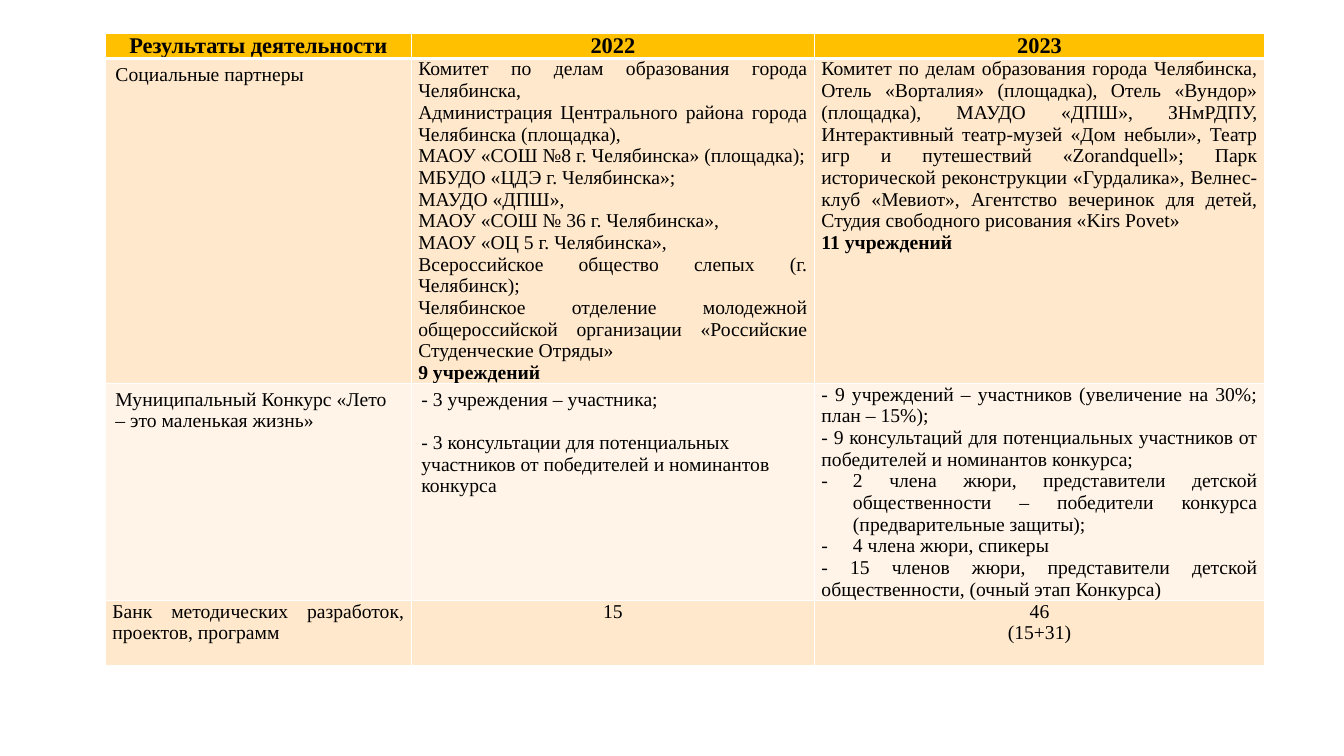
from lxml.etree import SubElement, fromstring
from pptx import Presentation
from pptx.dml.color import RGBColor
from pptx.enum.text import PP_ALIGN as Align
from pptx.oxml.ns import nsdecls, qn
from pptx.util import Pt

FONT = "Times New Roman"
HEADER_FILL, DARK_BAND, LIGHT_BAND = "FFC000", "FFE8CC", "FFF4E7"
LEFT, CENTER, JUSTIFY = Align.LEFT, Align.CENTER, Align.JUSTIFY
LINE_HEIGHT = 15.5
BULLET = "• "  # marks a paragraph that gets a hanging dash


def color(hex_text):
    return RGBColor.from_string(hex_text)


def add_border(cell, side, width):
    line = fromstring(
        f'<a:ln{side} {nsdecls("a")} w="{Pt(width)}"><a:solidFill>'
        f'<a:srgbClr val="FFFFFF"/></a:solidFill></a:ln{side}>')
    cell_props = cell._tc.get_or_add_tcPr()
    cell_props.insert("LRTB".index(side), line)


# Content: each cell is an alignment and its paragraphs
partners_2022 = [
    "Комитет по делам образования города Челябинска,",
    "Администрация Центрального района города Челябинска (площадка),",
    "МАОУ «СОШ №8 г. Челябинска» (площадка);",
    "МБУДО «ЦДЭ г. Челябинска»;",
    "МАУДО «ДПШ»,",
    "МАОУ «СОШ № 36 г. Челябинска»,",
    "МАОУ «ОЦ 5 г. Челябинска»,",
    "Всероссийское общество слепых (г. Челябинск);",
    "Челябинское отделение молодежной общероссийской организации "
    "«Российские Студенческие Отряды»",
    "9 учреждений",
]
partners_2023 = [
    "Комитет по делам образования города Челябинска, Отель «Ворталия» "
    "(площадка), Отель «Вундор» (площадка), МАУДО «ДПШ», ЗНмРДПУ, "
    "Интерактивный театр-музей «Дом небыли», Театр игр и путешествий "
    "«Zorandquell»; Парк исторической реконструкции «Гурдалика», "
    "Велнес-клуб «Мевиот», Агентство вечеринок для детей, "
    "Студия свободного рисования «Kirs Povet»",
    "11 учреждений",
]
contest_2022 = [
    "- 3 учреждения – участника;",
    "- 3 консультации для потенциальных участников от победителей "
    "и номинантов конкурса",
]
contest_2023 = [
    "- 9 учреждений – участников (увеличение на 30%; план – 15%);",
    "- 9 консультаций для потенциальных участников от победителей "
    "и номинантов конкурса;",
    BULLET + "2 члена жюри, представители детской общественности – "
    "победители конкурса (предварительные защиты);",
    BULLET + "4 члена жюри, спикеры",
    "- 15 членов жюри, представители детской общественности, "
    "(очный этап Конкурса)",
]
rows = [
    (HEADER_FILL, 17, [(CENTER, ["Результаты деятельности"]),
                       (CENTER, ["2022"]), (CENTER, ["2023"])]),
    (DARK_BAND, 232, [(LEFT, ["Социальные партнеры"]),
                      (JUSTIFY, partners_2022), (JUSTIFY, partners_2023)]),
    (LIGHT_BAND, 155, [(LEFT, ["Муниципальный Конкурс «Лето – это маленькая жизнь»"]),
                       (LEFT, contest_2022), (JUSTIFY, contest_2023)]),
    (DARK_BAND, 46.5, [(JUSTIFY, ["Банк методических разработок, проектов, программ"]),
                       (CENTER, ["15"]), (CENTER, ["46", "(15+31)"])]),
]
column_widths = [218.5, 288, 321.5]

# Slide
deck = Presentation()
deck.slide_width, deck.slide_height = Pt(960), Pt(540)
page = deck.slides.add_slide(deck.slide_layouts[6])

# Table frame
table_height = sum(height for _, height, _ in rows)
table = page.shapes.add_table(len(rows), len(column_widths), Pt(75.3), Pt(24),
                              Pt(sum(column_widths)), Pt(table_height)).table
for column, width in zip(table.columns, column_widths):
    column.width = Pt(width)

# Cells
for row_index, (fill, height, cells) in enumerate(rows):
    table.rows[row_index].height = Pt(height)
    is_header = row_index == 0
    for column_index, (align, texts) in enumerate(cells):
        cell = table.cell(row_index, column_index)
        cell.fill.solid()
        cell.fill.fore_color.rgb = color(fill)
        for side in "LRTB":
            thick = (is_header and side == "B") or (row_index == 1 and side == "T")
            add_border(cell, side, 3 if thick else 1)

        # Left-aligned cells keep the roomier margins
        side_margin, end_margin = (7.2, 3.6) if align == LEFT else (5, 0)
        cell.margin_left = cell.margin_right = Pt(side_margin)
        cell.margin_top = cell.margin_bottom = Pt(end_margin)

        # Paragraphs
        cell.text_frame.text = "\n".join(text.removeprefix(BULLET) for text in texts)
        for para, text in zip(cell.text_frame.paragraphs, texts):
            para.alignment = align
            if text.startswith(BULLET):
                para_props = para._p.get_or_add_pPr()
                para_props.set("marL", str(Pt(22.5)))
                para_props.set("indent", str(-Pt(22.5)))
                SubElement(para_props, qn("a:buFont"), typeface=FONT)
                SubElement(para_props, qn("a:buChar"), char="-")
            for span in para.runs:
                span.font.name = FONT
                span.font.size = Pt(16 if is_header else 14)
                span.font.bold = is_header or text.endswith(" учреждений")
                span.font.color.rgb = color("000000")

# One line of air between the two contest items of 2022
table.cell(2, 1).text_frame.paragraphs[1].space_before = Pt(LINE_HEIGHT)

deck.save("out.pptx")
